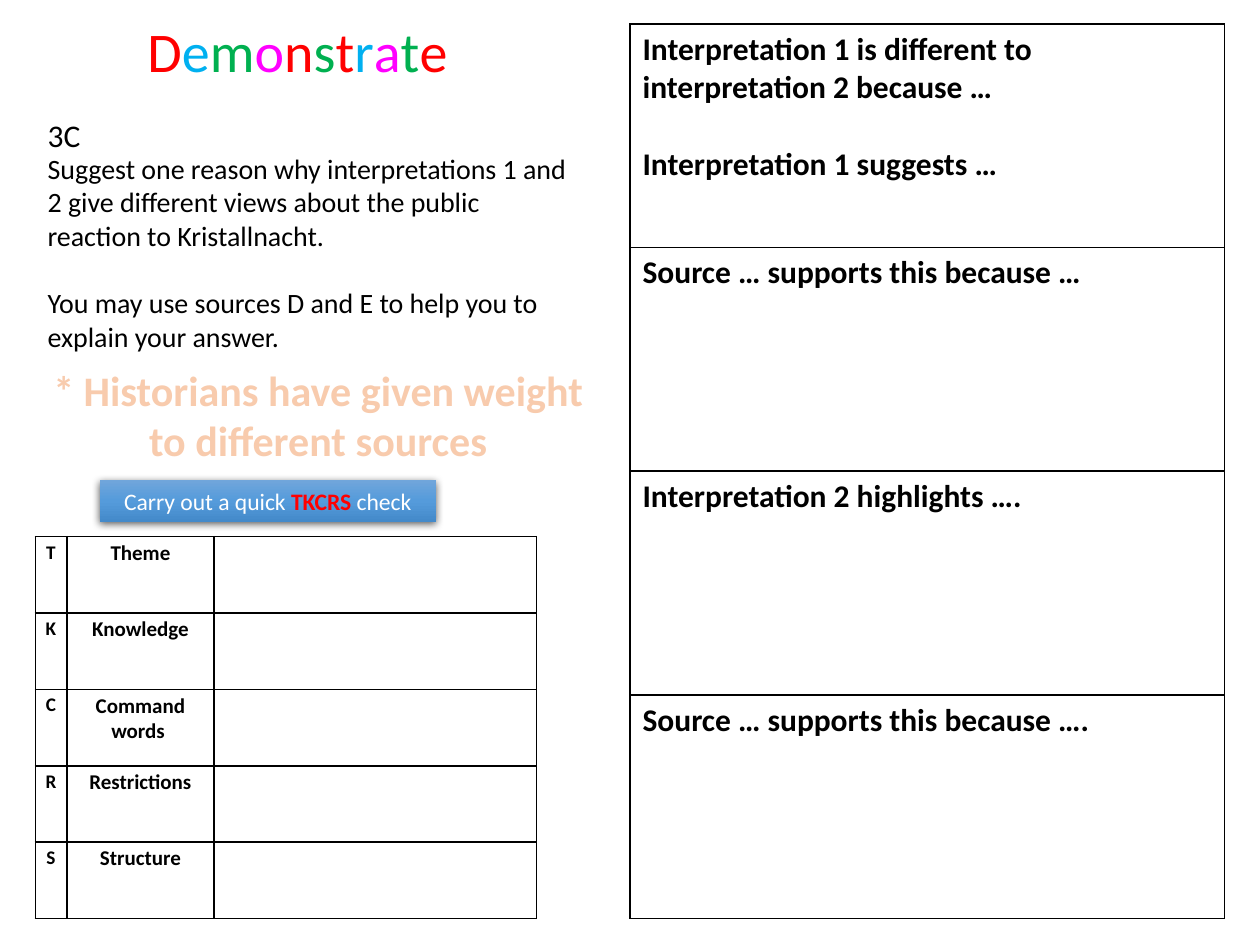
from copy import deepcopy
from pptx import Presentation
from pptx.dml.color import RGBColor
from pptx.enum.shapes import MSO_SHAPE as Shape
from pptx.enum.text import MSO_ANCHOR as Anchor, PP_ALIGN as Align
from pptx.oxml import parse_xml
from pptx.oxml.ns import nsdecls
from pptx.util import Inches, Pt


def style(font, size, color="000000", bold=False):
    font.name, font.size, font.bold = "Calibri", Pt(size), bold
    font.color.rgb = RGBColor.from_string(color)


def format_table(table):
    """Clear the banded style and rule every cell in black."""
    table.first_row = table.horz_banding = False
    for cell in table.iter_cells():
        cell.fill.background()
        props = cell._tc.get_or_add_tcPr()
        for index, side in enumerate(("lnL", "lnR", "lnT", "lnB")):
            props.insert(index, parse_xml(
                f'<a:{side} {nsdecls("a")} w="12700"><a:solidFill>'
                f'<a:srgbClr val="000000"/></a:solidFill></a:{side}>'))


deck = Presentation()
deck.slide_width, deck.slide_height = Inches(10), Inches(7.5)
page = deck.slides.add_slide(deck.slide_layouts[5])

# Title with a colour for each letter
title = page.shapes.title
title.left, title.top = Inches(1.07), Inches(0.08)
title.width, title.height = Inches(5.35), Inches(0.64)
title.text_frame.vertical_anchor = Anchor.TOP
para = title.text_frame.paragraphs[0]
para.alignment = Align.LEFT
red, blue, green, pink = "FF0000", "00B0F0", "00B050", "FF00FF"
letter_colors = [red, blue, green, pink, red, green, red, blue, pink, green, red]
for letter, color in zip("Demonstrate", letter_colors):
    span = para.add_run()
    span.text = letter
    style(span.font, 32, color)

# Question and reminder: left, top, width, height, wrap, size, colour, bold,
# alignment, gap between paragraphs, paragraphs
texts = [
    (0.28, 1.15, 4.33, 1.72, True, 16, "000000", False, Align.LEFT, 19.5,
     ["Suggest one reason why interpretations 1 and 2 give different views "
      "about the public reaction to Kristallnacht.",
      "You may use sources D and E to help you to explain your answer."]),
    (0.28, 0.87, 0.46, 0.4, False, 18, "000000", False, Align.LEFT, 0, ["3C"]),
    (0.3, 2.84, 4.45, 0.91, False, 24, "F8CBAD", True, Align.CENTER, 0,
     ["* Historians have given weight", "to different sources"]),
]
for left, top, width, height, wrap, size, color, bold, align, gap, lines in texts:
    box = page.shapes.add_textbox(Inches(left), Inches(top), Inches(width), Inches(height))
    frame = box.text_frame
    frame.word_wrap = wrap
    frame.text = "\n".join(lines)
    for index, para in enumerate(frame.paragraphs):
        para.alignment = align
        para.space_before = Pt(gap if index else 0)
        style(para.font, size, color, bold)

# Banner with gradient and soft shadow
banner = page.shapes.add_shape(Shape.RECTANGLE, Inches(0.79), Inches(3.81),
                               Inches(2.67), Inches(0.33))
banner.line.fill.background()
banner.fill.gradient()
banner.fill.gradient_angle = 270
stop_list = banner._element.spPr.find(".//{*}gsLst")
stop_list.insert(1, deepcopy(stop_list[0]))
for stop, position, color in zip(banner.fill.gradient_stops, (0, 0.5, 1),
                                 ("71A6DB", "559BDB", "448ACA")):
    stop.position = position
    stop.color.rgb = RGBColor.from_string(color)
banner.shadow.inherit = False
banner._element.spPr.find("{*}effectLst").append(parse_xml(
    f'<a:outerShdw {nsdecls("a")} blurRad="57150" dist="19050" dir="5400000" '
    'algn="ctr" rotWithShape="0"><a:srgbClr val="000000">'
    '<a:alpha val="63000"/></a:srgbClr></a:outerShdw>'))
banner.text_frame.word_wrap = True
para = banner.text_frame.paragraphs[0]
para.alignment = Align.CENTER
for text, color, bold in [("Carry out a quick ", "FFFFFF", False),
                          ("TKCRS", red, True), (" check", "FFFFFF", False)]:
    span = para.add_run()
    span.text = text
    style(span.font, 13.5, color, bold)

# TKCRS checklist
checks = ["Theme", "Knowledge", "Command\nwords ", "Restrictions", "Structure"]
checklist = page.shapes.add_table(len(checks), 3, Inches(0.28), Inches(4.26),
                                  Inches(3.98), Inches(3.03)).table
for column, width in zip(checklist.columns, (0.25, 1.17, 2.56)):
    column.width = Inches(width)
for row, check in enumerate(checks):
    for column, (text, size) in enumerate([("TKCRS"[row], 11), (check, 12)]):
        cell = checklist.cell(row, column)
        cell.margin_left = cell.margin_right = Inches(0.06)
        cell.margin_top = cell.margin_bottom = Inches(0.03)
        cell.text = text
        for para in cell.text_frame.paragraphs:
            para.alignment = Align.CENTER
            style(para.font, size, bold=True)
format_table(checklist)

# Answer frame
prompts = [
    "Interpretation 1 is different to interpretation 2 because …\n"
    "Interpretation 1 suggests …",
    "Source … supports this because …",
    "Interpretation 2 highlights ….",
    "Source … supports this because ….",
]
answers = page.shapes.add_table(len(prompts), 1, Inches(5), Inches(0.19),
                                Inches(4.72), Inches(7.1)).table
for row, prompt in enumerate(prompts):
    cell = answers.cell(row, 0)
    cell.text = prompt
    for index, para in enumerate(cell.text_frame.paragraphs):
        para.space_before = Pt(22 if index else 0)
        style(para.font, 18, bold=True)
format_table(answers)

deck.save("out.pptx")
